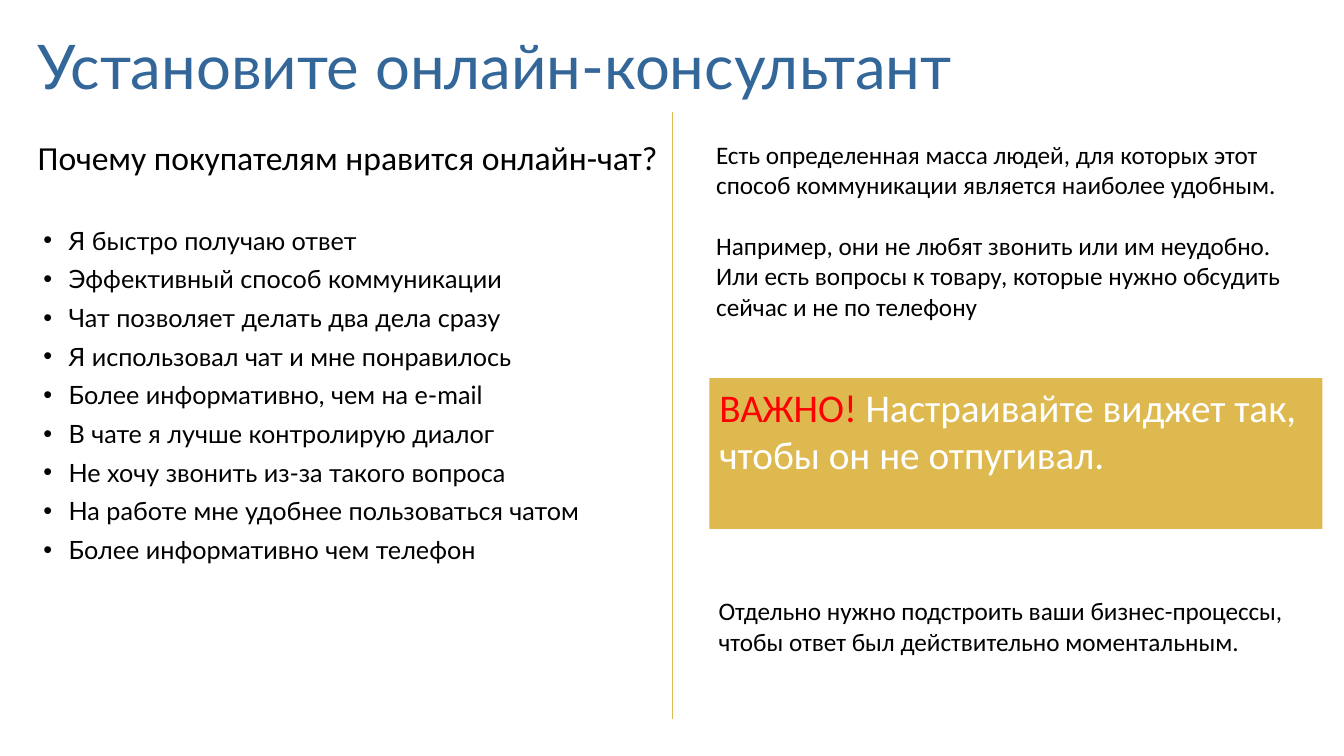
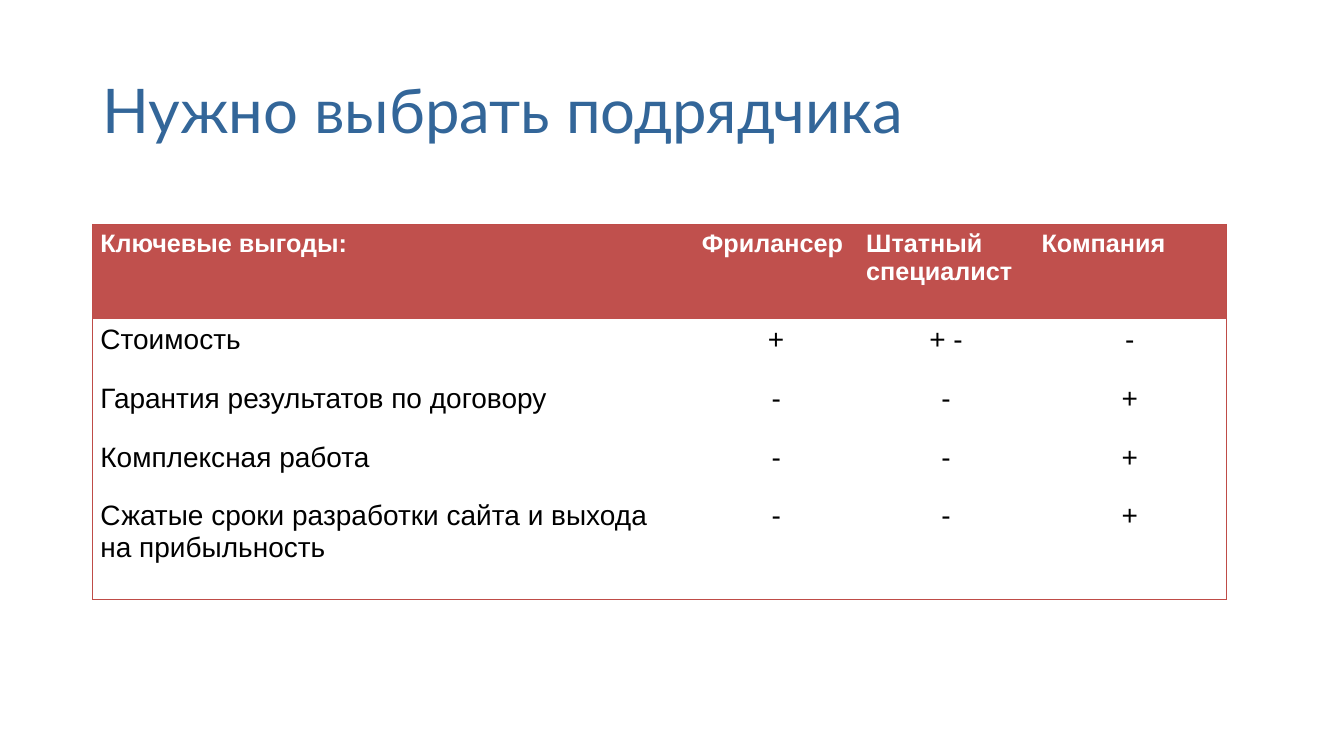
from dataclasses import dataclass

from lxml import etree
from pptx import Presentation
from pptx.dml.color import RGBColor
from pptx.enum.shapes import MSO_CONNECTOR, MSO_SHAPE
from pptx.enum.text import MSO_ANCHOR, MSO_AUTO_SIZE, PP_ALIGN
from pptx.oxml.ns import qn
from pptx.util import Cm, Pt

LEFT, CENTER = PP_ALIGN.LEFT, PP_ALIGN.CENTER
TOP, MIDDLE = MSO_ANCHOR.TOP, MSO_ANCHOR.MIDDLE
FIXED_SIZE = MSO_AUTO_SIZE.NONE
RECTANGLE, STRAIGHT = MSO_SHAPE.RECTANGLE, MSO_CONNECTOR.STRAIGHT
TITLE_AND_BODY, TITLE_ONLY = 1, 5
NO_TABLE_STYLE = "{2D5ABB26-0587-4C30-8999-92F81FD0307C}"


@dataclass(frozen=True)
class Theme:
    blue: str = "336699"
    gold: str = "DEB94F"
    red: str = "FF0000"
    brick: str = "C0504D"
    frame: str = "BF4C48"
    black: str = "000000"
    white: str = "FFFFFF"
    heading_font: str = "Lato"
    text_font: str = "Calibri"
    table_font: str = "Arial"
    title_size: int = 44
    callout_size: int = 28
    subtitle_size: int = 24
    cell_size: int = 20
    text_size: int = 18
    line_width: float = 0.75


THEME = Theme()


def apply(target, formats):
    for name, value in formats.items():
        setattr(target, name, value)


def font_style(name, size, color=THEME.black, bold=False):
    return {"name": name, "size": Pt(size), "bold": bold, "color": color}


def fill_solid(shape, color):
    shape.fill.solid()
    shape.fill.fore_color.rgb = RGBColor.from_string(color)


def add_span(para, text, style):
    span = para.add_run()
    span.text = text
    apply(span.font, {key: value for key, value in style.items() if key != "color"})
    span.font.color.rgb = RGBColor.from_string(style["color"])


def write(frame, paras, anchor=TOP, **para_formats):
    """Fill a text frame; each paragraph is a list of (text, style) spans."""
    apply(frame, {"word_wrap": True, "auto_size": FIXED_SIZE, "vertical_anchor": anchor,
                  "margin_left": Cm(0.25), "margin_right": Cm(0.25),
                  "margin_top": Cm(0.13), "margin_bottom": Cm(0.13)})
    for index, spans in enumerate(paras):
        para = frame.add_paragraph() if index else frame.paragraphs[0]
        apply(para, {"alignment": LEFT, "space_before": Pt(0), **para_formats})
        for text, style in spans:
            add_span(para, text, style)


def place(shape, left, top, width, height):
    apply(shape, {"left": Cm(left), "top": Cm(top), "width": Cm(width), "height": Cm(height)})


class Deck:
    def __init__(self, theme):
        self.theme = theme
        self.file = Presentation()
        apply(self.file, {"slide_width": Cm(33.87), "slide_height": Cm(19.05)})
        self.page = None

    def add_page(self, layout, title, *area):
        self.page = self.file.slides.add_slide(self.file.slide_layouts[layout])
        box = self.page.shapes.title
        place(box, *area)
        style = font_style(self.theme.heading_font, self.theme.title_size, self.theme.blue)
        write(box.text_frame, [[(title, style)]], MIDDLE, line_spacing=0.9)

    def bullets(self, items, *area):
        box = self.page.placeholders[1]
        place(box, *area)
        style = font_style(self.theme.heading_font, self.theme.text_size)
        write(box.text_frame, [[(item, style)] for item in items], space_after=Pt(6))
        for para in box.text_frame.paragraphs:
            properties = para._p.get_or_add_pPr()
            properties.set("marL", str(Cm(0.64)))
            properties.set("indent", str(-Cm(0.64)))
            etree.SubElement(properties, qn("a:buFont"), typeface="Arial")
            etree.SubElement(properties, qn("a:buChar"), char="•")

    def text(self, texts, size, *area, gap=0):
        """Add a text box; gap is the space in points between its paragraphs."""
        box = self.page.shapes.add_textbox(*map(Cm, area))
        style = font_style(self.theme.text_font, size)
        write(box.text_frame, [[(text, style)] for text in texts])
        for para in box.text_frame.paragraphs[1:]:
            para.space_before = Pt(gap)

    def callout(self, warning, lines, *area):
        box = self.page.shapes.add_shape(RECTANGLE, *map(Cm, area))
        box.shadow.inherit = False
        fill_solid(box, self.theme.gold)
        box.line.fill.background()
        font, size = self.theme.text_font, self.theme.callout_size
        paras = [[(line, font_style(font, size, self.theme.white))] for line in lines]
        paras[0].insert(0, (warning, font_style(font, size, self.theme.red)))
        write(box.text_frame, paras)

    def divider(self, x, top, bottom):
        line = self.page.shapes.add_connector(STRAIGHT, Cm(x), Cm(top), Cm(x), Cm(bottom))
        line.line.color.rgb = RGBColor.from_string(self.theme.gold)
        line.line.width = Pt(self.theme.line_width)
        etree.SubElement(line._element.spPr, qn("a:effectLst"))

    def table(self, rows, widths, heights, left, top):
        frame = self.page.shapes.add_table(len(rows), len(widths), Cm(left), Cm(top),
                                           Cm(sum(widths)), Cm(sum(heights)))
        next(frame._element.iter(qn("a:tableStyleId"))).text = NO_TABLE_STYLE
        table = frame.table
        apply(table, {"first_row": True, "horz_banding": False})
        for column, width in zip(table.columns, widths):
            column.width = Cm(width)
        for row, height in zip(table.rows, heights):
            row.height = Cm(height)
        theme = self.theme
        header = font_style(theme.table_font, theme.text_size, theme.white, True)
        body = font_style(theme.table_font, theme.cell_size)
        for r, texts in enumerate(rows):
            for c, text in enumerate(texts):
                cell = table.cell(r, c)
                apply(cell, {"margin_left": Cm(0.2), "margin_right": Cm(0.2),
                             "margin_top": Cm(0.13), "margin_bottom": Cm(0.13)})
                para = cell.text_frame.paragraphs[0]
                para.alignment = CENTER if r and c else LEFT
                add_span(para, text, body if r else header)
                edges = {"lnL": c == 0, "lnR": c == len(widths) - 1,
                         "lnT": r == 0, "lnB": r == len(rows) - 1}
                self.cell_borders(cell, [edge for edge, outer in edges.items() if outer])
                fill_solid(cell, theme.white if r else theme.brick)

    def cell_borders(self, cell, edges):
        properties = cell._tc.get_or_add_tcPr()
        for edge in edges:
            line = etree.SubElement(properties, qn(f"a:{edge}"), w=str(Pt(self.theme.line_width)))
            fill = etree.SubElement(line, qn("a:solidFill"))
            etree.SubElement(fill, qn("a:srgbClr"), val=self.theme.frame)


def add_chat_page(deck):
    theme = deck.theme
    deck.add_page(TITLE_AND_BODY, "Установите онлайн-консультант", 0.7, 0.6, 24.05, 2.3)
    deck.bullets(["Я быстро получаю ответ",
                  "Эффективный способ коммуникации",
                  "Чат позволяет делать два дела сразу",
                  "Я использовал чат и мне понравилось",
                  "Более информативно, чем на e-mail",
                  "В чате я лучше контролирую диалог",
                  "Не хочу звонить из-за такого вопроса",
                  "На работе мне удобнее пользоваться чатом",
                  "Более информативно чем телефон"], 0.84, 5.54, 15.3, 10.5)
    deck.callout("ВАЖНО! ", ["Настраивайте виджет так,", "чтобы он не отпугивал."],
                 17.88, 9.53, 15.45, 3.8)
    deck.text(["Почему покупателям нравится онлайн-чат?"], theme.subtitle_size,
              0.7, 3.33, 17.17, 1.78)
    deck.text(["Есть определенная масса людей, для которых этот способ коммуникации "
               "является наиболее удобным.",
               "Например, они не любят звонить или им неудобно. Или есть вопросы к товару, "
               "которые нужно обсудить сейчас и не по телефону"], theme.text_size,
              17.8, 3.38, 15.45, 6.35, gap=22)
    deck.divider(16.94, 2.82, 18.11)
    deck.text(["Отдельно нужно подстроить ваши бизнес-процессы, чтобы ответ был "
               "действительно моментальным."], theme.text_size, 17.86, 14.88, 15.32, 2.54)


def add_contractor_page(deck):
    deck.add_page(TITLE_ONLY, "Нужно выбрать подрядчика", 2.33, 1.01, 29.21, 3.68)
    deck.table([["Ключевые выгоды:", "Фрилансер", "Штатный специалист", "Компания"],
                ["Стоимость", "+", "+ -", "-"],
                ["Гарантия результатов по договору", "-", "-", "+"],
                ["Комплексная работа", "-", "-", "+"],
                ["Сжатые сроки разработки сайта и выхода на прибыльность", "-", "-", "+"]],
               widths=[15.16, 4.14, 4.42, 4.85], heights=[2.39, 1.48, 1.48, 1.48, 2.62],
               left=2.33, top=5.65)


def main():
    deck = Deck(THEME)
    add_chat_page(deck)
    add_contractor_page(deck)
    deck.file.save("out.pptx")


if __name__ == "__main__":
    main()
